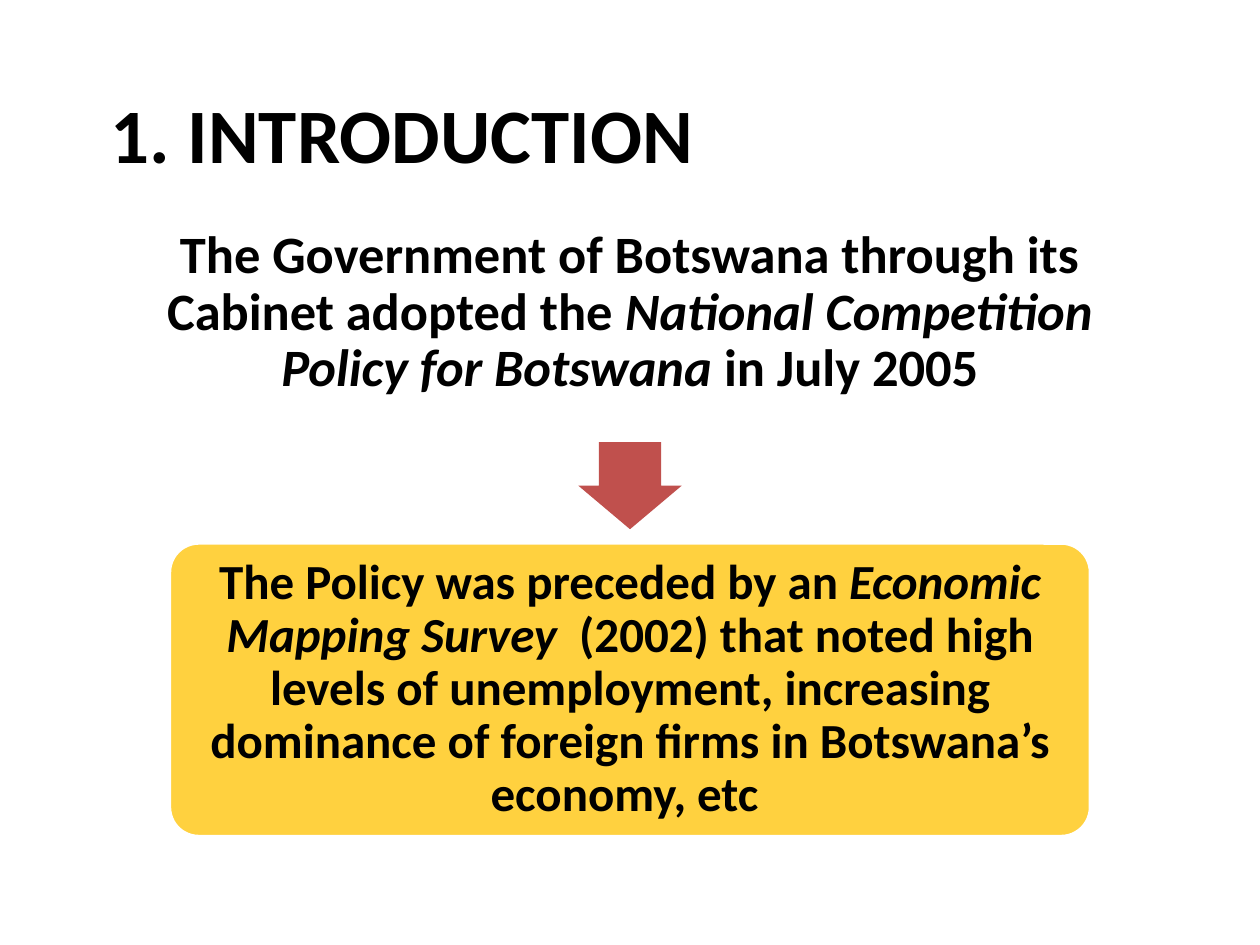
from pptx import Presentation
from pptx.dml.color import RGBColor
from pptx.enum import shapes, text
from pptx.util import Inches, Pt

BLACK = RGBColor(0x00, 0x00, 0x00)
WHITE = RGBColor(0xFF, 0xFF, 0xFF)
RED = RGBColor(0xC0, 0x50, 0x4D)
YELLOW = RGBColor(0xFF, 0xD1, 0x3F)
FONT = "Calibri"
WIDTH, HEIGHT = 10, 7.5

# Content: each step has top, width, height, fill, text size and (text, italic) spans
TITLE = "1. INTRODUCTION"
STEPS = [
    (1.57, 7.87, 1.83, None, 30, [
        ("The Government of Botswana through its Cabinet adopted the ", False),
        ("National Competition Policy for Botswana ", True),
        ("in July 2005", False),
    ]),
    (4.31, 7.31, 2.33, YELLOW, 28, [
        ("The Policy was preceded by an ", False),
        ("Economic Mapping Survey ", True),
        (" (2002) that noted high levels of unemployment, increasing "
         "dominance of foreign firms in Botswana’s economy, etc ", False),
    ]),
]
ARROW = (3.51, 0.82, 0.69)  # top, width, height


def style(paragraph, size, align):
    paragraph.alignment = align
    font = paragraph.font
    font.name, font.size, font.bold = FONT, Pt(size), True
    font.color.rgb = BLACK


def add_centred(page, kind, top, width, height, fill):
    """Add a shape centred across the slide."""
    left = (WIDTH - width) / 2
    shape = page.shapes.add_shape(
        kind, Inches(left), Inches(top), Inches(width), Inches(height))
    shape.shadow.inherit = False
    if fill is None:
        shape.fill.background()
    else:
        shape.fill.solid()
        shape.fill.fore_color.rgb = fill
    return shape


def add_step(page, top, width, height, fill, size, spans):
    box = add_centred(page, shapes.MSO_SHAPE.ROUNDED_RECTANGLE,
                      top, width, height, fill)
    box.adjustments[0] = 0.1
    box.line.color.rgb = WHITE
    box.line.width = Pt(2)
    frame = box.text_frame
    frame.word_wrap = True
    frame.vertical_anchor = text.MSO_ANCHOR.MIDDLE
    frame.margin_left = frame.margin_right = Inches(0.12)
    frame.margin_top = frame.margin_bottom = Inches(0.12)
    para = frame.paragraphs[0]
    para.line_spacing = 0.9
    style(para, size, text.PP_ALIGN.CENTER)
    for words, italic in spans:
        span = para.add_run()
        span.text = words
        span.font.italic = italic
        span.font.color.rgb = BLACK


def main():
    deck = Presentation()
    deck.slide_width, deck.slide_height = Inches(WIDTH), Inches(HEIGHT)
    page = deck.slides.add_slide(deck.slide_layouts[5])

    # Title
    title = page.shapes.title
    title.left, title.top = Inches(0.78), Inches(0.47)
    title.width, title.height = Inches(8.5), Inches(1.17)
    title.text_frame.text = TITLE
    title.text_frame.vertical_anchor = text.MSO_ANCHOR.MIDDLE
    style(title.text_frame.paragraphs[0], 44, text.PP_ALIGN.LEFT)

    # Steps and the arrow between them
    for step in STEPS:
        add_step(page, *step)
    arrow = add_centred(page, shapes.MSO_SHAPE.DOWN_ARROW, *ARROW, RED)
    arrow.adjustments[0], arrow.adjustments[1] = 0.6, 0.5
    arrow.line.fill.background()

    deck.save("out.pptx")


if __name__ == "__main__":
    main()
